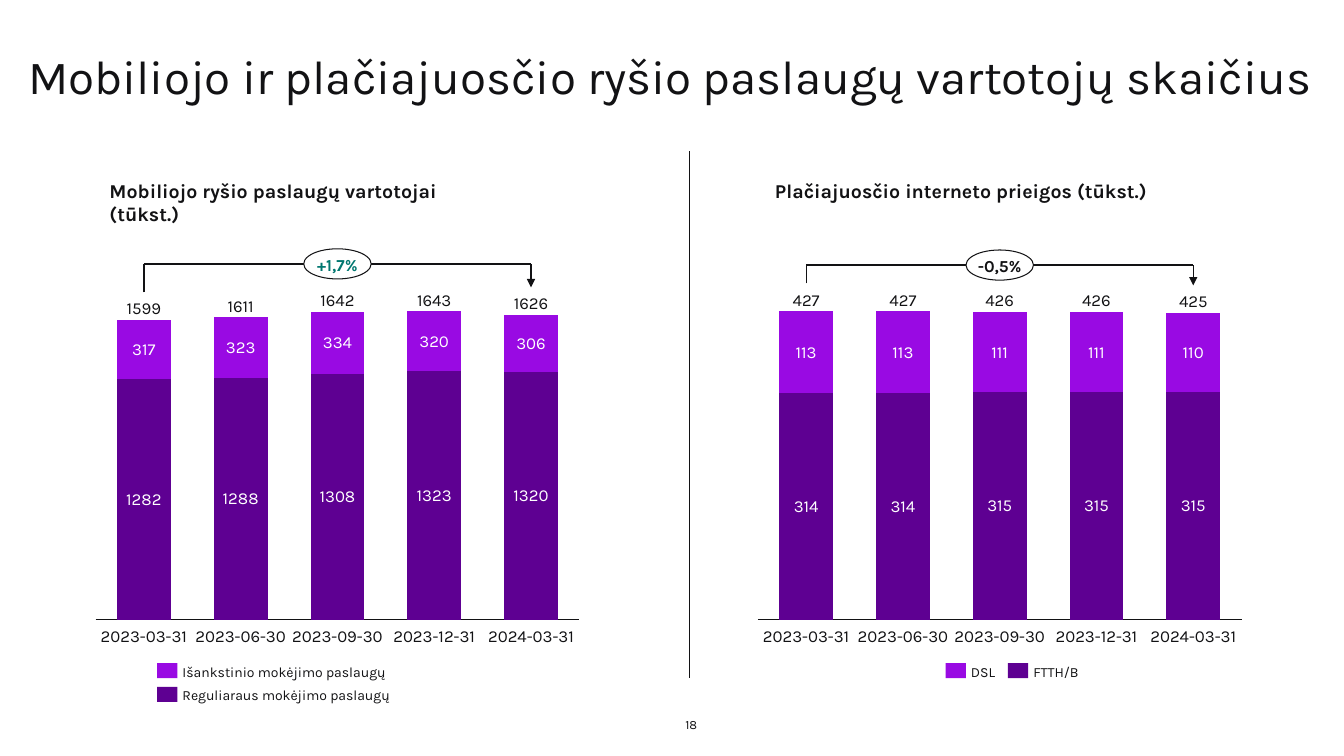
from dataclasses import dataclass

from lxml import etree
from pptx import Presentation
from pptx.chart.data import CategoryChartData
from pptx.dml.color import RGBColor
from pptx.enum.chart import XL_CHART_TYPE, XL_LABEL_POSITION, XL_TICK_LABEL_POSITION, XL_TICK_MARK
from pptx.enum.shapes import MSO_CONNECTOR, MSO_SHAPE
from pptx.enum.text import MSO_ANCHOR, PP_ALIGN
from pptx.oxml import parse_xml
from pptx.oxml.ns import qn
from pptx.util import Cm, Pt

STACKED = XL_CHART_TYPE.COLUMN_STACKED
LABEL_CENTER = XL_LABEL_POSITION.CENTER
NO_LABELS = XL_TICK_LABEL_POSITION.NONE
NO_TICKS = XL_TICK_MARK.NONE
STRAIGHT = MSO_CONNECTOR.STRAIGHT
OVAL, RECTANGLE = MSO_SHAPE.OVAL, MSO_SHAPE.RECTANGLE
TOP, MIDDLE, BOTTOM = MSO_ANCHOR.TOP, MSO_ANCHOR.MIDDLE, MSO_ANCHOR.BOTTOM
LEFT, CENTER = PP_ALIGN.LEFT, PP_ALIGN.CENTER

FONT = "Karla"
COLORS = {"text": "121214", "white": "FFFFFF", "dark": "5E0092", "bright": "990AE3", "growth": "007770"}
DATES = ["2023-03-31", "2023-06-30", "2023-09-30", "2023-12-31", "2024-03-31"]

# Chart geometry in centimetres; the plot area is a fraction of the chart
CHART_TOP, CHART_WIDTH, CHART_HEIGHT = 7.11, 12.65, 9.25
PLOT = {"x": 0.018, "y": 0.08, "w": 0.964, "h": 0.84}
PLOT_HEIGHT = PLOT["h"] * CHART_HEIGHT
BASELINE = CHART_TOP + PLOT["y"] * CHART_HEIGHT + PLOT_HEIGHT
COLUMN_STEP = PLOT["w"] * CHART_WIDTH / len(DATES)


@dataclass
class LegendEntry:
    label: str
    color: str
    left: float
    top: float
    width: float


@dataclass
class Panel:
    heading: str
    heading_left: float
    heading_width: float
    chart_left: float
    lower: list[int]
    upper: list[int]
    change: str
    change_color: str
    arrow_y: float
    arrow_start: float
    arrow_end: float
    legend: list[LegendEntry]


PANELS = [
    Panel("Mobiliojo ryšio paslaugų vartotojai (tūkst.)", 2.51, 10.24, 2.18,
          [1282, 1288, 1308, 1323, 1320], [317, 323, 334, 320, 306],
          "+1,7%", "growth", 6.65, 7.37, 7.24,
          [LegendEntry("Išankstinio mokėjimo paslaugų", "bright", 3.96, 16.71, 5.6),
           LegendEntry("Reguliaraus mokėjimo paslaugų", "dark", 3.96, 17.31, 5.6)]),
    Panel("Plačiajuosčio interneto prieigos (tūkst.)", 19.28, 11.23, 18.87,
          [314, 314, 315, 315, 315], [113, 113, 111, 111, 110],
          "-0,5%", "text", 6.68, 7.14, 7.19,
          [LegendEntry("DSL", "bright", 23.83, 16.71, 0.9),
           LegendEntry("FTTH/B", "dark", 25.4, 16.71, 1.5)]),
]


def rgb(name: str) -> RGBColor:
    return RGBColor.from_string(COLORS[name])


def set_font(font, size: float, color: str = "text", bold: bool = False) -> None:
    values = {"name": FONT, "size": Pt(size), "bold": bold}
    for attribute, value in values.items():
        setattr(font, attribute, value)
    font.color.rgb = rgb(color)


def write_text(shape, text: str, size: float, color: str = "text", bold: bool = False,
               align=LEFT, anchor=TOP, spacing: float = 1.06, wrap: bool = True,
               margins: tuple[float, float] = (0, 0)) -> None:
    side, edge = Cm(margins[0]), Cm(margins[1])
    frame_format = {"word_wrap": wrap, "vertical_anchor": anchor, "margin_left": side,
                    "margin_right": side, "margin_top": edge, "margin_bottom": edge}
    for attribute, value in frame_format.items():
        setattr(shape.text_frame, attribute, value)
    paragraph = shape.text_frame.paragraphs[0]
    paragraph.alignment, paragraph.line_spacing = align, spacing
    run = paragraph.add_run()
    run.text = text
    set_font(run.font, size, color, bold)


def add_text(slide, left: float, top: float, width: float, height: float,
             text: str, size: float, **options) -> None:
    box = slide.shapes.add_textbox(Cm(left), Cm(top), Cm(width), Cm(height))
    write_text(box, text, size, **options)


def add_line(slide, start: tuple[float, float], end: tuple[float, float],
             width: float = 1, arrow: bool = False) -> None:
    line = slide.shapes.add_connector(STRAIGHT, *(Cm(value) for value in start + end))
    line.line.color.rgb = rgb("text")
    line.line.width = Pt(width)
    if arrow:
        etree.SubElement(line.line._get_or_add_ln(), qn("a:tailEnd"), type="triangle")
    etree.SubElement(line._element.spPr, qn("a:effectLst"))


def add_filled(slide, kind, left: float, top: float, width: float, height: float, color: str):
    shape = slide.shapes.add_shape(kind, Cm(left), Cm(top), Cm(width), Cm(height))
    shape.shadow.inherit = False
    shape.fill.solid()
    shape.fill.fore_color.rgb = rgb(color)
    shape.line.fill.background()
    return shape


def place_plot(chart) -> None:
    plot_area = chart._chartSpace.chart.plotArea
    for old_layout in plot_area.findall(qn("c:layout")):
        plot_area.remove(old_layout)
    sizes = "".join(f'<c:{key} val="{value}"/>' for key, value in PLOT.items())
    plot_area.insert(0, parse_xml(
        '<c:layout xmlns:c="http://schemas.openxmlformats.org/drawingml/2006/chart"><c:manualLayout>'
        '<c:layoutTarget val="inner"/><c:xMode val="edge"/><c:yMode val="edge"/>'
        f'{sizes}</c:manualLayout></c:layout>'))


def add_column_chart(slide, panel: Panel, maximum: int) -> None:
    data = CategoryChartData()
    data.categories = DATES
    lower_entry, upper_entry = panel.legend[1], panel.legend[0]
    data.add_series(lower_entry.label, panel.lower)
    data.add_series(upper_entry.label, panel.upper)
    chart = slide.shapes.add_chart(STACKED, Cm(panel.chart_left), Cm(CHART_TOP),
                                   Cm(CHART_WIDTH), Cm(CHART_HEIGHT), data).chart
    chart.has_legend = chart.has_title = False
    set_font(chart.font, 12)
    place_plot(chart)

    axis_format = {"has_major_gridlines": False, "major_tick_mark": NO_TICKS,
                   "minor_tick_mark": NO_TICKS, "tick_label_position": NO_LABELS}
    for axis in (chart.category_axis, chart.value_axis):
        for attribute, value in axis_format.items():
            setattr(axis, attribute, value)
    chart.category_axis.format.line.color.rgb = rgb("text")
    chart.category_axis.format.line.width = Pt(0.75)
    value_axis = chart.value_axis
    value_axis.minimum_scale, value_axis.maximum_scale, value_axis.visible = 0, maximum, False

    plot = chart.plots[0]
    plot.gap_width, plot.overlap, plot.vary_by_categories = 80, 100, False
    for series, entry in zip(plot.series, (lower_entry, upper_entry)):
        series.format.fill.solid()
        series.format.fill.fore_color.rgb = rgb(entry.color)
        labels = series.data_labels
        labels.show_value, labels.position = True, LABEL_CENTER
        set_font(labels.font, 12, "white")


def add_panel(slide, panel: Panel) -> None:
    totals = [low + high for low, high in zip(panel.lower, panel.upper)]
    first_center = panel.chart_left + PLOT["x"] * CHART_WIDTH + COLUMN_STEP / 2
    centers = [first_center + index * COLUMN_STEP for index in range(len(DATES))]
    add_column_chart(slide, panel, max(totals))

    # Dates under the columns and totals above them
    for center, date, total in zip(centers, DATES, totals):
        add_text(slide, center - 1.15, 15.75, 2.3, 0.53, date, 12, align=CENTER, wrap=False)
        bar_top = BASELINE - PLOT_HEIGHT * total / max(totals)
        add_text(slide, center - 0.53, bar_top - 0.58, 1.06, 0.53, str(total), 12,
                 align=CENTER, anchor=BOTTOM, wrap=False)

    # Change from the first to the last column
    first, last, y = centers[0], centers[-1], panel.arrow_y
    add_line(slide, (first, panel.arrow_start), (first, y))
    add_line(slide, (first, y), (last, y))
    add_line(slide, (last, y), (last, panel.arrow_end), arrow=True)
    bubble = add_filled(slide, OVAL, centers[2] - 0.85, y - 0.38, 1.7, 0.76, "white")
    bubble.line.color.rgb = rgb("text")
    bubble.line.width = Pt(0.75)
    write_text(bubble, panel.change, 12, panel.change_color, True, CENTER, MIDDLE, wrap=False)

    # Legend and heading
    for entry in panel.legend:
        add_filled(slide, RECTANGLE, entry.left, entry.top, 0.51, 0.38, entry.color)
        add_text(slide, entry.left + 0.64, entry.top - 0.03, entry.width, 0.46,
                 entry.label, 10, anchor=MIDDLE)
    add_text(slide, panel.heading_left, 4.37, panel.heading_width, 0.86, panel.heading, 14,
             bold=True, spacing=1.0, margins=(0.25, 0.13))


def main() -> None:
    presentation = Presentation()
    presentation.slide_width, presentation.slide_height = Cm(33.87), Cm(19.05)
    slide = presentation.slides.add_slide(presentation.slide_layouts[6])

    # Title, page number and divider
    add_text(slide, 0.71, 1.4, 32.44, 2.57,
             "Mobiliojo ir plačiajuosčio ryšio paslaugų vartotojų skaičius", 34, spacing=0.86)
    add_text(slide, 17.27, 17.83, 2.06, 0.61, "18", 9, anchor=BOTTOM, spacing=1.0)
    add_line(slide, (17.37, 3.81), (17.37, 17.09), 0.5)

    for panel in PANELS:
        add_panel(slide, panel)
    presentation.save("out.pptx")


if __name__ == "__main__":
    main()
